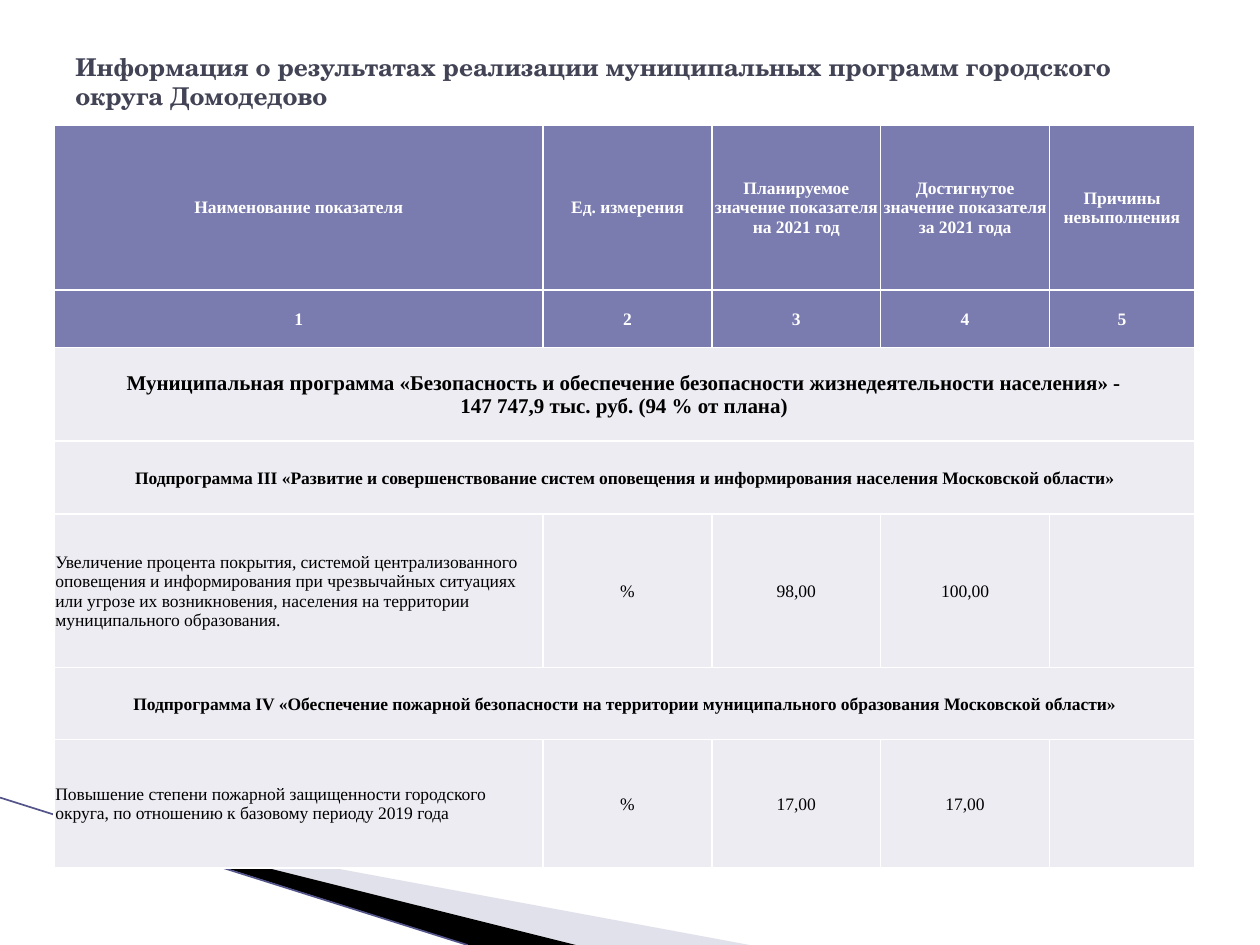
from lxml import etree
from pptx import Presentation
from pptx import util as u
from pptx.dml.color import RGBColor
from pptx.enum import shapes, text
from pptx.oxml import ns

PX = 9144  # 100 px to the inch
SERIF = "Times New Roman"
HUES = {"title": "424456", "head": "7A7BAE", "body": "ECECF2", "white": "FFFFFF",
        "black": "000000", "pale": "B6B6D1", "line": "53548A"}
COLS = [388, 134, 134, 134, 115]
ROWS = [131, 46, 74, 58, 122, 57, 102]
# Each row: kind, then its cells; a cell is a list of paragraphs
DATA = [
    ("head", ["Наименование показателя"], ["Ед. измерения"],
     ["Планируемое значение показателя на 2021 год"],
     ["Достигнутое значение показателя за 2021 года"], ["Причины невыполнения"]),
    ("head", ["1"], ["2"], ["3"], ["4"], ["5"]),
    ("program", ["Муниципальная программа «Безопасность и обеспечение безопасности "
                 "жизнедеятельности населения» -",
                 "147 747,9 тыс. руб. (94 % от плана)"]),
    ("part", ["Подпрограмма III «Развитие и совершенствование систем оповещения и "
              "информирования населения Московской области»"]),
    ("item", ["Увеличение процента покрытия, системой централизованного оповещения и "
              "информирования при чрезвычайных ситуациях или угрозе их возникновения, "
              "населения на территории муниципального образования."],
     ["%"], ["98,00"], ["100,00"], []),
    ("part", ["Подпрограмма IV «Обеспечение пожарной безопасности на территории "
              "муниципального образования Московской области»"]),
    ("item", ["Повышение степени пожарной защищенности городского округа, "
              "по отношению к базовому периоду 2019 года"],
     ["%"], ["17,00"], ["17,00"], []),
]


def rgb(hue):
    return RGBColor.from_string(HUES[hue])


def sub(node, tag, **attrs):
    return etree.SubElement(node, ns.qn(tag), **attrs)


def add_run(para, words, size, hue, bold, face=SERIF):
    run = para.add_run()
    run.text = words
    font = run.font
    font.size, font.bold, font.name = u.Pt(size), bold, face
    font.color.rgb = rgb(hue)


def add_wedge(slide, left, top, points, hue, alpha=None):
    spots = [(left + x, top + y) for x, y in points]
    form = slide.shapes.build_freeform(*spots[0], scale=PX)
    form.add_line_segments(spots[1:])
    wedge = form.convert_to_shape()
    wedge.shadow.inherit = False
    wedge.fill.solid()
    wedge.fill.fore_color.rgb = rgb(hue)
    wedge.line.fill.background()
    if alpha:
        tint = wedge.fill._xPr.find(".//" + ns.qn("a:srgbClr"))
        sub(tint, "a:alpha", val=str(alpha * 1000))


def add_decor(slide, left, top, wide, high):
    """Draw the sloping bands and the line in the lower left corner."""
    add_wedge(slide, left, top, [(55, 17), (wide, high), (456, high)], "pale", 40)
    add_wedge(slide, left, top, [(53, 16), (457, high), (372, high)], "black")
    line = slide.shapes.add_connector(
        shapes.MSO_CONNECTOR.STRAIGHT, left * PX, top * PX,
        (left + 371) * PX, (top + high) * PX)
    line.line.color.rgb = rgb("line")
    line.line.width = u.Pt(0.95)
    sub(line._element.spPr, "a:effectLst")


def add_title(slide, left, top, wide, high):
    box = slide.shapes.add_textbox(left * PX, top * PX, wide * PX, high * PX)
    frame = box.text_frame
    frame.word_wrap = True
    frame.vertical_anchor = text.MSO_ANCHOR.MIDDLE
    add_run(frame.paragraphs[0],
            "Информация о результатах реализации муниципальных программ "
            "городского округа Домодедово", 14, "title", True, "TeX Gyre Schola")


def style_cell(cell, hue):
    props = cell._tc.get_or_add_tcPr()
    for side in ("a:lnL", "a:lnR", "a:lnT", "a:lnB"):
        edge = sub(props, side, w=str(u.Pt(1)))
        sub(sub(edge, "a:solidFill"), "a:srgbClr", val=HUES["white"])
    cell.fill.solid()
    cell.fill.fore_color.rgb = rgb(hue)
    cell.vertical_anchor = text.MSO_ANCHOR.MIDDLE
    cell.margin_left = cell.margin_right = cell.margin_top = PX
    cell.margin_bottom = 0


def fill_cell(cell, lines, kind, align):
    frame = cell.text_frame
    for i, words in enumerate(lines):
        para = frame.add_paragraph() if i else frame.paragraphs[0]
        para.alignment = align
        add_run(para, words, 12 if kind == "program" else 10,
                "white" if kind == "head" else "black", kind != "item")


def add_grid(slide, left, top, wide, high):
    grid = slide.shapes.add_table(len(ROWS), len(COLS), left * PX, top * PX,
                                  wide * PX, high * PX).table
    for col, size in zip(grid.columns, COLS):
        col.width = size * PX
    for row, size in zip(grid.rows, ROWS):
        row.height = size * PX
    for r, (kind, *cells) in enumerate(DATA):
        for c in range(len(COLS)):
            style_cell(grid.cell(r, c), "head" if kind == "head" else "body")
        if len(cells) == 1:
            grid.cell(r, 0).merge(grid.cell(r, len(COLS) - 1))
        for c, lines in enumerate(cells):
            flush = kind == "item" and c == 0
            align = text.PP_ALIGN.LEFT if flush else text.PP_ALIGN.CENTER
            fill_cell(grid.cell(r, c), lines, kind, align)


def main():
    deck = Presentation()
    deck.slide_width, deck.slide_height = 1000 * PX, 750 * PX
    slide = deck.slides.add_slide(deck.slide_layouts[6])
    add_decor(slide, 0, 633, 595, 117)
    add_title(slide, 50, 30, 900, 69)
    add_grid(slide, 43, 99, sum(COLS), sum(ROWS))
    deck.save("out.pptx")


if __name__ == "__main__":
    main()
